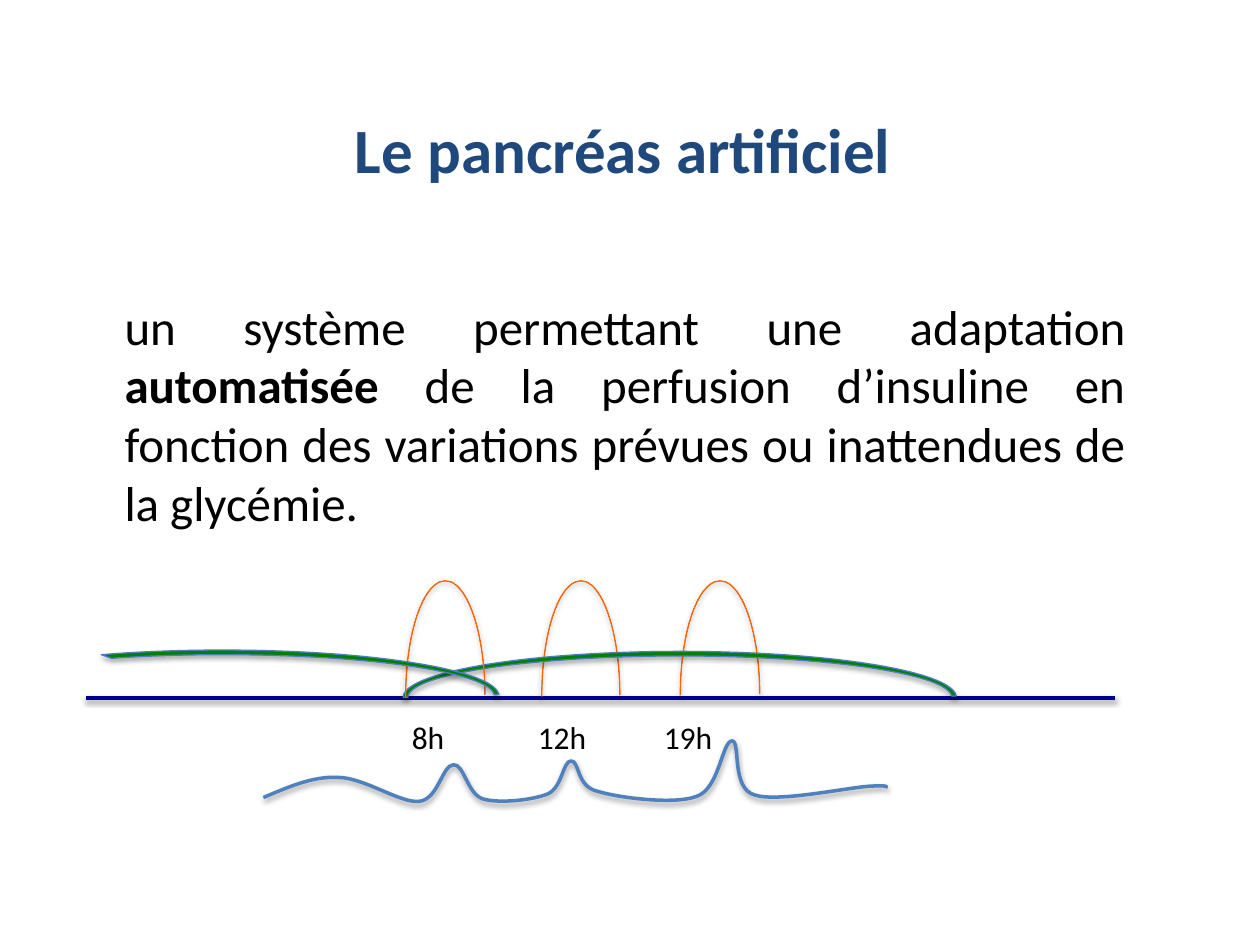
"""Builds the slide on the artificial pancreas with its insulin and glucose curves."""
from lxml import etree
from pptx import Presentation
from pptx.dml.color import RGBColor
from pptx.enum.shapes import MSO_CONNECTOR, MSO_SHAPE
from pptx.enum.text import MSO_ANCHOR, PP_ALIGN
from pptx.oxml.ns import qn
from pptx.util import Inches, Pt

BLOCK_ARC = MSO_SHAPE.BLOCK_ARC
STRAIGHT = MSO_CONNECTOR.STRAIGHT
MIDDLE = MSO_ANCHOR.MIDDLE
CENTER = PP_ALIGN.CENTER
JUSTIFY = PP_ALIGN.JUSTIFY

BLACK = RGBColor(0x00, 0x00, 0x00)
TITLE_BLUE = RGBColor(0x1F, 0x49, 0x7D)
GLUCOSE_BLUE = RGBColor(0x4F, 0x81, 0xBD)
AXIS_BLUE = RGBColor(0x00, 0x00, 0x90)
BASAL_GREEN = RGBColor(0x00, 0x80, 0x00)
BASAL_EDGE = RGBColor(0x4B, 0x7E, 0xBC)
BOLUS_ORANGE = RGBColor(0xFF, 0x66, 0x00)
BOLUS_DARK = RGBColor(0x3F, 0x80, 0xCE)
BOLUS_LIGHT = RGBColor(0xA4, 0xC4, 0xFF)
FONT = "Calibri"


def outline(shape, color, width, opacity, distance):
    shape.line.color.rgb = color
    shape.line.width = Pt(width)
    effects = etree.SubElement(shape._element.spPr, qn("a:effectLst"))
    shadow = etree.SubElement(effects, qn("a:outerShdw"), blurRad=str(Pt(3.1)),
                              dist=str(Pt(distance)), dir="5400000", rotWithShape="0")
    black = etree.SubElement(shadow, qn("a:srgbClr"), val=str(BLACK))
    etree.SubElement(black, qn("a:alpha"), val=str(opacity * 1000))


def add_arc(shapes, frame, adjustments, line_color):
    arc = shapes.add_shape(BLOCK_ARC, *[Inches(value) for value in frame])
    for index, value in enumerate(adjustments):
        arc.adjustments[index] = value
    if line_color == BASAL_EDGE:
        arc.fill.solid()
        arc.fill.fore_color.rgb = BASAL_GREEN
    else:
        arc.fill.gradient()
        arc.fill.gradient_angle = 90
        for stop, color in zip(arc.fill.gradient_stops, (BOLUS_DARK, BOLUS_LIGHT)):
            stop.color.rgb = color
    outline(arc, line_color, 0.75, 35, 1.8)


deck = Presentation()
deck.slide_width, deck.slide_height = Inches(10), Inches(7.5)
page = deck.slides.add_slide(deck.slide_layouts[5])
shapes = page.shapes

title = shapes.title
title.left, title.top = Inches(0.5), Inches(0.55)
title.width, title.height = Inches(9), Inches(1.25)
title.text_frame.text = "Le pancréas artificiel "
title.text_frame.vertical_anchor = MIDDLE
para = title.text_frame.paragraphs[0]
para.alignment = CENTER
font = para.runs[0].font
font.name, font.size, font.bold = FONT, Pt(36), True
font.color.rgb = TITLE_BLUE

glucose_start = (2.09, 6.33)
glucose_curves = [
    (2.28, 6.25, 2.48, 6.16, 2.68, 6.17),
    (2.89, 6.17, 3.18, 6.38, 3.33, 6.36),
    (3.48, 6.34, 3.51, 6.07, 3.6, 6.07),
    (3.68, 6.06, 3.71, 6.3, 3.83, 6.34),
    (3.96, 6.38, 4.23, 6.35, 4.35, 6.3),
    (4.46, 6.25, 4.47, 6.04, 4.53, 6.04),
    (4.6, 6.03, 4.57, 6.24, 4.74, 6.28),
    (4.9, 6.33, 5.35, 6.39, 5.53, 6.32),
    (5.71, 6.26, 5.73, 5.88, 5.81, 5.88),
    (5.88, 5.88, 5.8, 6.26, 5.99, 6.31),
    (6.17, 6.37, 6.73, 6.25, 6.9, 6.24),
    (7.08, 6.23, 7.03, 6.25, 7.03, 6.25),
]
builder = shapes.build_freeform(*[Inches(value) for value in glucose_start])
points = [(Inches(curve[i]), Inches(curve[i + 1])) for curve in glucose_curves for i in (0, 2, 4)]
builder.add_line_segments(points, close=False)
glucose = builder.convert_to_shape()
segments = list(glucose._element.iter(qn("a:lnTo")))
for first in range(0, len(segments), 3):
    bezier = etree.Element(qn("a:cubicBezTo"))
    segments[first].addprevious(bezier)
    for segment in segments[first:first + 3]:
        bezier.append(segment[0])
        segment.getparent().remove(segment)
glucose.fill.background()
outline(glucose, GLUCOSE_BLUE, 2, 38, 1.6)

body = shapes.add_textbox(Inches(0.89), Inches(2.3), Inches(8.14), Inches(1.99))
body.text_frame.word_wrap = True
para = body.text_frame.paragraphs[0]
para.alignment = JUSTIFY
for text, bold in [
    ("un système permettant une adaptation ", False),
    ("automatisée", True),
    (" de la perfusion d’insuline en fonction des variations prévues ou inattendues "
     "de la glycémie. ", False),
]:
    span = para.add_run()
    span.text = text
    span.font.name, span.font.size, span.font.bold = FONT, Pt(28), bold
    span.font.color.rgb = BLACK

axis = shapes.add_connector(STRAIGHT, Inches(0.68), Inches(5.54), Inches(8.85), Inches(5.54))
outline(axis, AXIS_BLUE, 2, 38, 1.6)

add_arc(shapes, (4.3, 4.61, 0.62, 1.83), (108, 214.87, 0), BOLUS_ORANGE)
add_arc(shapes, (5.4, 4.61, 0.63, 1.81), (108, 214.81, 0), BOLUS_ORANGE)
add_arc(shapes, (3.2, 5.17, 4.39, 0.73), (108, 215.82, 0.05), BASAL_EDGE)
add_arc(shapes, (3.22, 4.61, 0.63, 1.84), (108, 213.92, 0), BOLUS_ORANGE)

hours = shapes.add_textbox(Inches(3.17), Inches(5.65), Inches(4.9), Inches(0.4))
hours.text_frame.word_wrap = True
para = hours.text_frame.paragraphs[0]
para.text = "8h\t12h\t19h"
tabs = etree.SubElement(para._p.get_or_add_pPr(), qn("a:tabLst"))
for position in (1, 2):
    etree.SubElement(tabs, qn("a:tab"), pos=str(Inches(position)), algn="l")
font = para.runs[0].font
font.name, font.size = FONT, Pt(18)
font.color.rgb = BLACK

add_arc(shapes, (-0.43, 5.16, 4.39, 0.73), (119.3, 215.82, 0.05), BASAL_EDGE)

deck.save("out.pptx")
